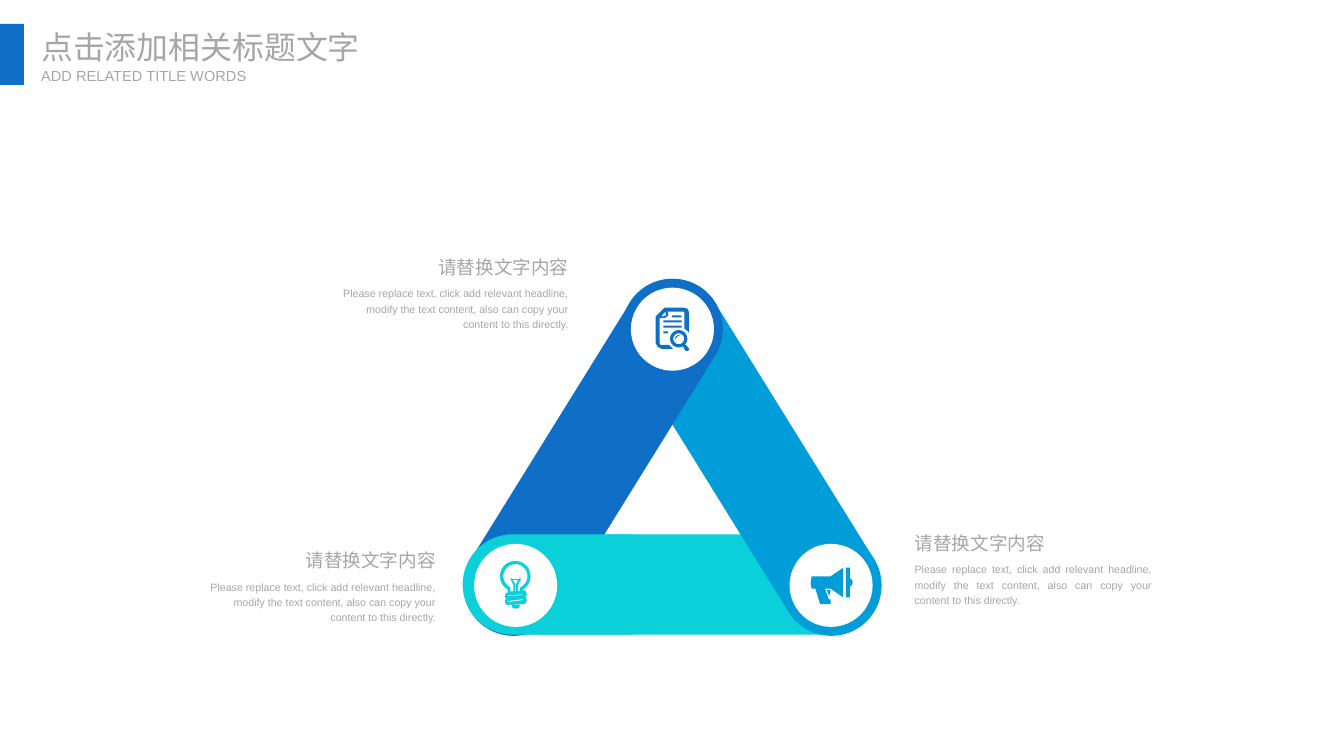
from dataclasses import dataclass
from math import cos, radians, sin

from pptx import Presentation
from pptx.dml.color import RGBColor
from pptx.enum.shapes import MSO_SHAPE as Preset
from pptx.enum.text import MSO_ANCHOR as Anchor, MSO_AUTO_SIZE as AutoSize, PP_ALIGN as Align
from pptx.oxml.ns import qn
from pptx.util import Pt

COLORS = {"blue": "0F6FC6", "sky": "009DD9", "teal": "0BD0D9", "white": "FFFFFF", "gray": "A6A6A6"}
LATIN, CHINESE = "Arial", "Noto Sans CJK SC"
HEADING = "请替换文字内容"
BODY = ("Please replace text, click add relevant headline, modify the text content, "
        "also can copy your content to this directly.")
BAR_HEIGHT = 75.6
CIRCLE_SIZE = 62.6

Points = list[tuple[float, float]]


@dataclass
class Bar:
    left: float
    top: float
    width: float
    color: str
    rotation: float = 0


@dataclass
class Icon:
    left: float
    top: float
    color: str
    contours: list[Points]


@dataclass
class Caption:
    left: float
    top: float
    width: float
    heading_align: Align
    body_align: Align


def paint(shape, color: str) -> None:
    shape.shadow.inherit = False
    shape.fill.solid()
    shape.fill.fore_color.rgb = RGBColor.from_string(COLORS[color])
    shape.line.fill.background()


def add_preset(page, preset, left: float, top: float, width: float, height: float, color: str):
    shape = page.shapes.add_shape(preset, Pt(left), Pt(top), Pt(width), Pt(height))
    paint(shape, color)
    return shape


def add_bar(page, bar: Bar) -> None:
    shape = add_preset(page, Preset.ROUNDED_RECTANGLE, bar.left, bar.top, bar.width, BAR_HEIGHT, bar.color)
    shape.adjustments[0] = 0.5
    shape.rotation = bar.rotation


def arc(x: float, y: float, radius: float, start: int = 0, end: int = 360) -> Points:
    return [(x + radius * cos(radians(angle)), y + radius * sin(radians(angle)))
            for angle in range(start, end + 1, 10)]


def block(x: float, y: float, width: float, height: float) -> Points:
    return [(x, y), (x + width, y), (x + width, y + height), (x, y + height)]


def add_icon(page, icon: Icon) -> None:
    contours = [[(Pt(icon.left + x), Pt(icon.top + y)) for x, y in contour] for contour in icon.contours]
    builder = page.shapes.build_freeform(*contours[0][0])
    for index, (start, *others) in enumerate(contours):
        if index:
            builder.move_to(*start)
        builder.add_line_segments(others, close=True)
    paint(builder.convert_to_shape(), icon.color)


def write(box, text: str, *, size: float, font: str = LATIN, align=Align.LEFT,
          spacing: float = 1.0, wrap: bool = True, inset: bool = True) -> None:
    frame = box.text_frame
    frame.word_wrap = wrap
    frame.auto_size = AutoSize.NONE
    frame.vertical_anchor = Anchor.TOP
    if not inset:
        frame.margin_left = frame.margin_right = frame.margin_top = frame.margin_bottom = 0
    para = frame.paragraphs[0]
    para.alignment = align
    para.line_spacing = spacing
    span = para.add_run()
    span.text = text
    span.font.size = Pt(size)
    span.font.name = font
    span.font.color.rgb = RGBColor.from_string(COLORS["gray"])
    east_asian = span.font._element.makeelement(qn("a:ea"), {"typeface": CHINESE})
    span.font._element.find(qn("a:latin")).addnext(east_asian)


def add_text(page, left: float, top: float, width: float, height: float, text: str, **style) -> None:
    write(page.shapes.add_textbox(Pt(left), Pt(top), Pt(width), Pt(height)), text, **style)


def add_caption(page, caption: Caption) -> None:
    add_text(page, caption.left, caption.top, caption.width, 25.9, HEADING,
             size=14, align=caption.heading_align, spacing=1.2)
    add_text(page, caption.left, caption.top + 25.2, caption.width, 41, BODY,
             size=8, align=caption.body_align, spacing=1.2)


# The last bar covers the foot of the left one, so the three sides interlock
BARS = [
    Bar(349.9, 402.5, 313.9, "teal"),
    Bar(414.7, 306.7, 303.1, "sky", 58.2),
    Bar(295.2, 306.7, 303.1, "blue", 301.8),
    Bar(348.5, 402.5, 162, "teal"),
]
CIRCLES = [(475.2, 216.7), (357.1, 409.7), (594.7, 409.7)]

DOCUMENT = Icon(493.9, 231.8, "blue", [
    # Page frame and folded corner
    [(7.2, 0), (20.9, 0), (23.8, 0.7), (25.2, 3.6), (25.2, 19.4), (24.5, 18), (21.6, 15.8), (21.6, 3.6),
     (20.9, 2.9), (8.6, 2.9), (9.4, 3.6), (9.4, 5.8), (7.9, 7.2), (6.5, 7.9), (2.9, 7.9), (2.9, 26.6),
     (3.6, 28.1), (10.1, 28.1), (13, 31), (4.3, 31), (1.4, 29.5), (0, 26.6), (0, 6.5), (6.5, 0)],
    [(7.2, 2.9), (4.3, 6.5), (5.8, 6.5), (7.2, 6.1), (7.9, 5), (7.2, 3.6)],
    # Text lines
    block(12.2, 5.8, 7.2, 1.5), block(5.8, 9.5, 13.7, 1.5),
    block(5.8, 13.6, 13.7, 1.5), block(5.8, 17.8, 3.6, 1.5),
    # Magnifier
    arc(17.3, 23.4, 6.5), arc(17.3, 23.4, 4.1),
    [(14.4, 23.8), (15.1, 21.6), (17, 20.6), (19.2, 20.4), (16.6, 21.4)],
    [(20.6, 29.3), (22.3, 32.4), (23.8, 32.8), (25.2, 31.7), (25.2, 31), (23, 28.3), (22, 27.9)],
])
BULB = Icon(376.6, 422.6, "teal", [
    # Glass and screw base
    arc(11.5, 11.5, 11.5, 120, 420) + [
        (18, 22.3), (19.4, 22.3), (20.2, 25.2), (19.4, 27.4), (20.2, 29.5), (19.4, 31.7), (18.7, 32.4),
        (5, 33.1), (3.6, 31), (4.3, 28.1), (3.6, 26.6), (4.3, 24.5), (5.8, 23.8)],
    arc(11.6, 11.5, 9.1, 120, 420) + [
        (15.1, 20.2), (15.1, 22.3), (13.7, 23), (13.7, 18), (15.8, 13.7), (15.1, 13), (13.7, 13.7),
        (9.4, 13.7), (8.6, 13), (7.9, 13.7), (10.1, 18), (10.1, 23), (7.9, 23), (7.9, 20.2)],
    # Filament, tip and threads
    [(13.7, 14.4), (12.2, 17.3), (12.2, 23), (11.5, 23), (11.5, 17.3), (9.4, 14.4)],
    [(15.1, 33.1), (8.6, 33.1), (9.4, 35.3), (12.2, 36), (14.4, 35.3)],
    [(17.3, 28.8), (5.8, 30.2), (5.8, 31), (17.3, 29.5)],
    [(17.3, 25.2), (5.8, 25.9), (5.8, 26.6), (17.3, 25.6)],
])
MEGAPHONE = Icon(610.6, 427.7, "sky", [
    [(0.7, 6.5), (15.1, 6.5), (24.5, 0), (24.5, 22.3), (15.1, 15.8), (10.8, 15.8), (13.7, 23.8),
     (15.1, 23.8), (15.1, 27.4), (7.2, 27.4), (3.6, 15.8), (0.7, 15.8), (0, 11.5)],
    [(29.5, 7.9), (31.2, 9), (31.7, 10.8), (31.2, 13), (29.5, 14.4), (29.5, 22.3),
     (26.6, 22.3), (26.6, 0), (29.5, 0)],
    [(15.1, 16.6), (12.2, 16.6), (13.7, 20.9), (14.4, 20.9), (14.4, 19.4)],
])
CAPTIONS = [
    Caption(681.8, 393.8, 193, Align.LEFT, Align.JUSTIFY),
    Caption(248.9, 185.8, 186.5, Align.RIGHT, Align.RIGHT),
    Caption(148.9, 406.8, 186.5, Align.RIGHT, Align.RIGHT),
]


def main() -> None:
    deck = Presentation()
    deck.slide_width, deck.slide_height = Pt(1012.3), Pt(569.5)
    page = deck.slides.add_slide(deck.slide_layouts[5])

    # Title band
    add_preset(page, Preset.RECTANGLE, 0, 18, 18, 46, "blue")
    title = page.shapes.title
    title.left, title.top, title.width, title.height = Pt(31), Pt(20.9), Pt(242.6), Pt(28.8)
    write(title, "点击添加相关标题文字", size=24, font=CHINESE, wrap=False, inset=False)
    add_text(page, 31, 50.4, 157, 13.7, "ADD RELATED TITLE WORDS", size=11, wrap=False, inset=False)

    # Triangle with its icons
    for bar in BARS:
        add_bar(page, bar)
    for left, top in CIRCLES:
        add_preset(page, Preset.OVAL, left, top, CIRCLE_SIZE, CIRCLE_SIZE, "white")
    for icon in (DOCUMENT, BULB, MEGAPHONE):
        add_icon(page, icon)

    # Captions
    for caption in CAPTIONS:
        add_caption(page, caption)

    deck.save("out.pptx")


if __name__ == "__main__":
    main()
